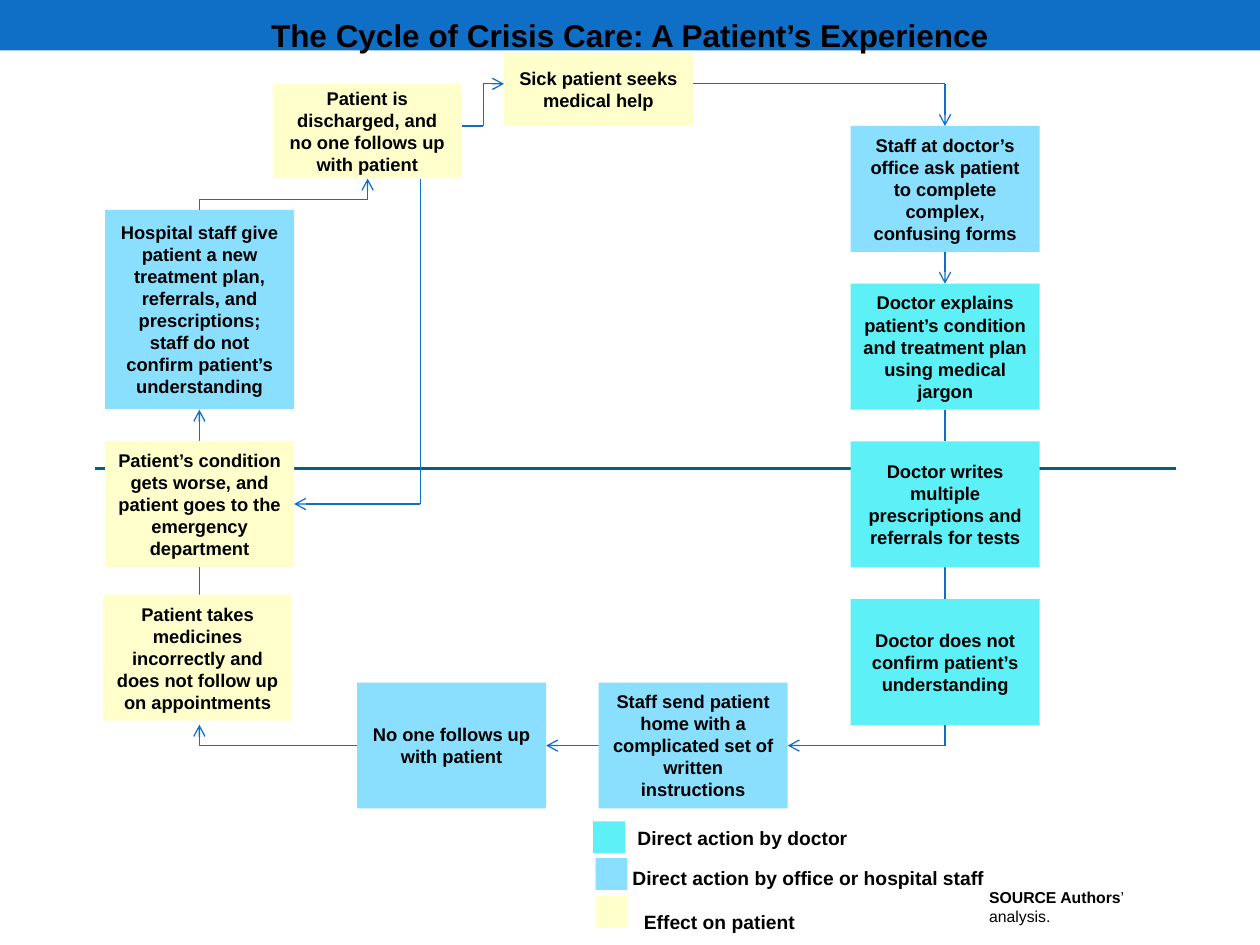
from dataclasses import dataclass

from lxml import etree
from pptx import Presentation
from pptx import util as u
from pptx.dml.color import RGBColor
from pptx.enum import shapes, text
from pptx.oxml import ns


@dataclass(frozen=True)
class Theme:
    font: str = "Arial"
    ink: str = "000000"
    blue: str = "0F6FC6"
    rule: str = "04617B"
    doctor: str = "5EF0F7"
    staff: str = "8ADFFF"
    patient: str = "FFFFCC"
    title_size: float = 18
    box_size: float = 10.5
    legend_size: float = 11
    source_size: float = 9
    line_width: float = 0.75
    rule_width: float = 1.5


THEME = Theme()
BOX_WIDTH, BOX_HEIGHT = 3.81, 2.54
RIGHT_LEFT, RIGHT_TOP, RIGHT_STEP = 17.15, 2.54, 3.18
LEFT_LEFT = 2.12
RIGHT_AXIS, LEFT_AXIS = 19.05, 4.02
BOTTOM_TOP, BOTTOM_AXIS = 13.76, 15.03

RIGHT_COLUMN = [
    ("Staff at doctor’s office ask patient to complete complex, confusing forms", THEME.staff),
    ("Doctor explains patient’s condition and treatment plan using medical jargon", THEME.doctor),
    ("Doctor writes multiple prescriptions and referrals for tests", THEME.doctor),
    ("Doctor does not confirm patient’s understanding", THEME.doctor),
]

# Text, colour, left, top, height
OTHER_STEPS = [
    ("Sick patient seeks medical help", THEME.patient, 10.16, 1.06, 1.48),
    ("Staff send patient home with a complicated set of written instructions",
     THEME.staff, 12.07, BOTTOM_TOP, BOX_HEIGHT),
    ("No one follows up with patient", THEME.staff, 7.2, BOTTOM_TOP, BOX_HEIGHT),
    ("Patient takes medicines incorrectly and does not follow up on appointments",
     THEME.patient, 2.08, 11.99, BOX_HEIGHT),
    ("Patient’s condition gets worse, and patient goes to the emergency department",
     THEME.patient, LEFT_LEFT, 8.89, BOX_HEIGHT),
    ("Hospital staff give patient a new treatment plan, referrals, and prescriptions; "
     "staff do not confirm patient’s understanding", THEME.staff, LEFT_LEFT, 4.23, 4.02),
    ("Patient is discharged, and no one follows up with patient",
     THEME.patient, 5.5, 1.69, 1.91),
]

# Corner points of each route, and whether it ends in an arrowhead
ROUTES = [
    ([(13.97, 1.69), (RIGHT_AXIS, 1.69), (RIGHT_AXIS, 2.54)], True),
    ([(RIGHT_AXIS, 5.08), (RIGHT_AXIS, 5.72)], True),
    ([(RIGHT_AXIS, 8.26), (RIGHT_AXIS, 8.9)], False),
    ([(RIGHT_AXIS, 11.44), (RIGHT_AXIS, 12.08)], False),
    ([(RIGHT_AXIS, 14.61), (RIGHT_AXIS, BOTTOM_AXIS), (15.88, BOTTOM_AXIS)], True),
    ([(12.07, BOTTOM_AXIS), (11.01, BOTTOM_AXIS)], True),
    ([(7.2, BOTTOM_AXIS), (LEFT_AXIS, BOTTOM_AXIS), (LEFT_AXIS, 14.61)], True),
    ([(LEFT_AXIS, 11.99), (LEFT_AXIS, 11.43)], False),
    ([(LEFT_AXIS, 8.89), (LEFT_AXIS, 8.26)], True),
    ([(LEFT_AXIS, 4.23), (LEFT_AXIS, 4.02), (7.41, 4.02), (7.41, 3.6)], True),
    ([(9.31, 2.54), (9.74, 2.54), (9.74, 1.69), (10.16, 1.69)], True),
    ([(8.47, 3.6), (8.47, 10.16), (5.93, 10.16)], True),
]

# Label, colour, swatch left and top, text left, top, width and height
LEGEND = [
    ("Direct action by doctor", THEME.doctor, (11.96, 16.56), (12.6, 16.31, 7.32, 0.94)),
    ("Direct action by office or hospital staff", THEME.staff,
     (12.01, 17.3), (12.5, 17.04, 7.62, 1.02)),
    ("Effect on patient", THEME.patient, (12.01, 18.06), (12.73, 17.81, 7.37, 1.14)),
]


def add_run(paragraph, words, size, bold=True):
    run = paragraph.add_run()
    run.text = words
    run.font.name = THEME.font
    run.font.size = u.Pt(size)
    run.font.bold = bold
    run.font.color.rgb = RGBColor.from_string(THEME.ink)


def write(shape, *parts, size, align=text.PP_ALIGN.LEFT, anchor=text.MSO_ANCHOR.TOP):
    """Fill one paragraph from (words, bold) parts."""
    frame = shape.text_frame
    frame.word_wrap = True
    frame.vertical_anchor = anchor
    paragraph = frame.paragraphs[0]
    paragraph.alignment = align
    for words, bold in parts:
        add_run(paragraph, words, size, bold)


def add_box(slide, left, top, width, height, color):
    shape = slide.shapes.add_shape(
        shapes.MSO_SHAPE.RECTANGLE, u.Cm(left), u.Cm(top), u.Cm(width), u.Cm(height))
    shape.shadow.inherit = False
    shape.fill.solid()
    shape.fill.fore_color.rgb = RGBColor.from_string(color)
    shape.line.fill.background()
    return shape


def add_step(slide, words, color, left, top, height=BOX_HEIGHT):
    shape = add_box(slide, left, top, BOX_WIDTH, height, color)
    write(shape, (words, True), size=THEME.box_size,
          align=text.PP_ALIGN.CENTER, anchor=text.MSO_ANCHOR.MIDDLE)


def add_text(slide, left, top, width, height, *parts, **style):
    shape = slide.shapes.add_textbox(u.Cm(left), u.Cm(top), u.Cm(width), u.Cm(height))
    write(shape, *parts, **style)


def add_line(slide, start, end, color=THEME.blue, width=THEME.line_width, arrow=False):
    ends = [u.Cm(value) for value in (*start, *end)]
    connector = slide.shapes.add_connector(shapes.MSO_CONNECTOR.STRAIGHT, *ends)
    connector.line.color.rgb = RGBColor.from_string(color)
    connector.line.width = u.Pt(width)
    if arrow:
        outline = connector.line._get_or_add_ln()
        etree.SubElement(outline, ns.qn("a:tailEnd"), type="arrow")
    etree.SubElement(connector._element.spPr, ns.qn("a:effectLst"))


def add_route(slide, points, arrow):
    for index in range(1, len(points)):
        is_last = index == len(points) - 1
        add_line(slide, points[index - 1], points[index], arrow=arrow and is_last)


def main():
    presentation = Presentation()
    presentation.slide_width, presentation.slide_height = u.Cm(25.4), u.Cm(19.05)
    slide = presentation.slides.add_slide(presentation.slide_layouts[6])

    # Title band and rule
    add_box(slide, 0, 0, 25.4, 1.02, THEME.blue)
    add_line(slide, (1.91, 9.45), (23.7, 9.45), THEME.rule, THEME.rule_width)
    add_text(slide, 0, 0.2, 25.4, 1.02,
             ("The Cycle of Crisis Care: A Patient’s Experience", True),
             size=THEME.title_size, align=text.PP_ALIGN.CENTER)

    # Cycle of steps
    for points, arrow in ROUTES:
        add_route(slide, points, arrow)
    for index, (words, color) in enumerate(RIGHT_COLUMN):
        add_step(slide, words, color, RIGHT_LEFT, RIGHT_TOP + index * RIGHT_STEP)
    for step in OTHER_STEPS:
        add_step(slide, *step)

    # Legend and source
    for words, color, swatch, label in LEGEND:
        add_box(slide, *swatch, 0.64, 0.64, color)
        add_text(slide, *label, (words, True), size=THEME.legend_size,
                 anchor=text.MSO_ANCHOR.BOTTOM)
    add_text(slide, 19.69, 17.78, 4.01, 0.64, ("SOURCE Authors", True),
             ("’ analysis.", False), size=THEME.source_size)

    presentation.save("out.pptx")


if __name__ == "__main__":
    main()
